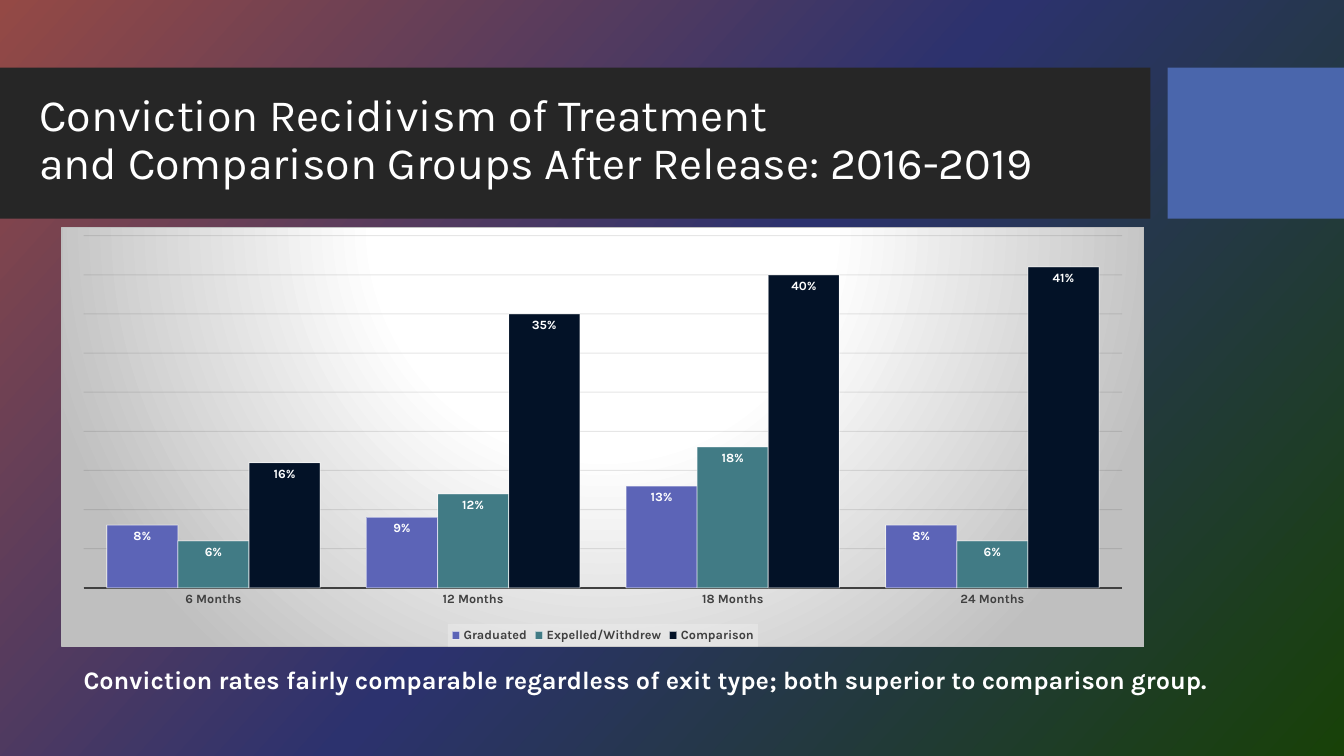
from dataclasses import dataclass

from lxml.etree import SubElement
from pptx import Presentation
from pptx.chart.data import CategoryChartData
from pptx.dml.color import RGBColor
from pptx.enum.chart import XL_CHART_TYPE, XL_LABEL_POSITION, XL_LEGEND_POSITION, XL_TICK_MARK
from pptx.enum.shapes import MSO_SHAPE
from pptx.enum.text import MSO_ANCHOR
from pptx.oxml import parse_xml
from pptx.oxml.ns import nsdecls, qn
from pptx.util import Inches, Pt


@dataclass(frozen=True)
class Theme:
    font: str = "Karla"
    white: str = "FFFFFF"
    banner: str = "262626"
    accent: str = "4A66AC"
    axis: str = "404040"
    grid: str = "0D0D0D"
    border: str = "BFBFBF"
    legend: str = "F2F2F2"
    background: tuple = ((0, "944945"), (50, "2C326E"), (100, "184108"))
    chart_fill: tuple = ((0, "FFFFFF"), (39, "FFFFFF"), (100, "BFBFBF"))
    title_size: int = 32
    caption_size: int = 18
    chart_size: int = 10
    label_size: int = 9


theme = Theme()


def style_font(font, size, color, bold=False):
    font.name = theme.font
    font.size = Pt(size)
    font.bold = bold
    font.color.rgb = RGBColor.from_string(color)


def gradient_xml(stops, direction):
    stop_xml = "".join(
        f'<a:gs pos="{position * 1000}"><a:srgbClr val="{color}"/></a:gs>'
        for position, color in stops
    )
    return (f'<a:gradFill {nsdecls("a")} rotWithShape="1">'
            f"<a:gsLst>{stop_xml}</a:gsLst>{direction}</a:gradFill>")


presentation = Presentation()
presentation.slide_width = Inches(13.33)
presentation.slide_height = Inches(7.5)
slide = presentation.slides.add_slide(presentation.slide_layouts[6])

# Diagonal background gradient
background_fill = slide.background.fill
background_fill.gradient()
old_gradient = slide.element.find(".//" + qn("a:gradFill"))
old_gradient.getparent().replace(
    old_gradient,
    parse_xml(gradient_xml(theme.background, '<a:lin ang="2520000" scaled="0"/>')),
)

# Banner and accent block
for left, width, color in ((0, 11.41, theme.banner), (11.58, 1.75, theme.accent)):
    block = slide.shapes.add_shape(
        MSO_SHAPE.RECTANGLE, Inches(left), Inches(0.67), Inches(width), Inches(1.5))
    block.shadow.inherit = False
    block.fill.solid()
    block.fill.fore_color.rgb = RGBColor.from_string(color)
    block.line.fill.background()

# Title and caption
texts = (
    ("Conviction Recidivism of Treatment\vand Comparison Groups After Release: 2016-2019",
     (0.29, 0.81, 12.32, 1.18), theme.title_size, False, MSO_ANCHOR.MIDDLE, 0.9),
    ("Conviction rates fairly comparable regardless of exit type; "
     "both superior to comparison group.",
     (0.73, 6.54, 11.61, 0.4), theme.caption_size, True, MSO_ANCHOR.TOP, 1.0),
)
for text, box, size, bold, anchor, spacing in texts:
    text_frame = slide.shapes.add_textbox(*map(Inches, box)).text_frame
    text_frame.word_wrap = True
    text_frame.vertical_anchor = anchor
    paragraph = text_frame.paragraphs[0]
    paragraph.text = text
    paragraph.line_spacing = spacing
    style_font(paragraph.font, size, theme.white, bold)

# Recidivism chart
series_data = (
    ("Graduated", (0.08, 0.09, 0.13, 0.08), "5C64B7"),
    ("Expelled/Withdrew", (0.06, 0.12, 0.18, 0.06), "417B85"),
    ("Comparison", (0.16, 0.35, 0.40, 0.41), "031227"),
)
chart_data = CategoryChartData(number_format="0%")
chart_data.categories = [f"{months} Months" for months in (6, 12, 18, 24)]
for name, values, _ in series_data:
    chart_data.add_series(name, values)
chart = slide.shapes.add_chart(
    XL_CHART_TYPE.COLUMN_CLUSTERED,
    Inches(0.61), Inches(2.25), Inches(10.74), Inches(4.17), chart_data).chart
chart.has_title = False
style_font(chart.font, theme.chart_size, theme.white)

# Columns and their labels
plot = chart.plots[0]
plot.gap_width = 65
plot.overlap = 0
plot.vary_by_categories = False
for series, (_, _, color) in zip(plot.series, series_data):
    series.format.fill.solid()
    series.format.fill.fore_color.rgb = RGBColor.from_string(color)
    line = series.format.line
    line.width = Pt(0.75)
    line.color.rgb = RGBColor.from_string(theme.white)
    line_color = line._ln.find(".//" + qn("a:srgbClr"))
    SubElement(line_color, qn("a:alpha"), val="50000")
    labels = series.data_labels
    labels.show_value = True
    labels.number_format = "0%"
    labels.number_format_is_linked = False
    labels.position = XL_LABEL_POSITION.INSIDE_END
    style_font(labels.font, theme.label_size, theme.white, True)

# Axes
category_axis = chart.category_axis
category_axis.major_tick_mark = XL_TICK_MARK.NONE
category_axis.format.line.width = Pt(1.5)
category_axis.format.line.color.rgb = RGBColor.from_string(theme.axis)
style_font(category_axis.tick_labels.font, theme.label_size, theme.axis, True)
value_axis = chart.value_axis
value_axis.visible = False
value_axis.minimum_scale = 0
value_axis.maximum_scale = 0.45
value_axis.major_unit = 0.05
value_axis.tick_labels.number_format = "0%"
value_axis.tick_labels.number_format_is_linked = False
value_axis.has_major_gridlines = True
grid_line = value_axis.major_gridlines.format.line
grid_line.width = Pt(0.75)
grid_line.color.rgb = RGBColor.from_string(theme.grid)
SubElement(grid_line._ln.find(".//" + qn("a:srgbClr")), qn("a:alpha"), val="10000")

# Legend with a translucent panel
chart.has_legend = True
legend = chart.legend
legend.position = XL_LEGEND_POSITION.BOTTOM
legend.include_in_layout = False
style_font(legend.font, theme.label_size, theme.axis, True)
legend._element.find(qn("c:txPr")).addprevious(parse_xml(
    f'<c:spPr {nsdecls("c", "a")}><a:solidFill><a:srgbClr val="{theme.legend}">'
    '<a:alpha val="39000"/></a:srgbClr></a:solidFill></c:spPr>'))

# Plot area position, as shares of the chart
plot_area = chart._chartSpace.find(".//" + qn("c:plotArea"))
for old_layout in plot_area.findall(qn("c:layout")):
    plot_area.remove(old_layout)
plot_area.insert(0, parse_xml(
    f'<c:layout {nsdecls("c")}><c:manualLayout><c:layoutTarget val="inner"/>'
    '<c:xMode val="edge"/><c:yMode val="edge"/><c:x val="0.02"/><c:y val="0.02"/>'
    '<c:w val="0.96"/><c:h val="0.84"/></c:manualLayout></c:layout>'))

# Chart panel: radial gradient and border
radial = ('<a:path path="circle"><a:fillToRect l="50000" t="-80000" '
          'r="50000" b="180000"/></a:path>')
chart._chartSpace.find(qn("c:chart")).addnext(parse_xml(
    f'<c:spPr {nsdecls("c", "a")}>{gradient_xml(theme.chart_fill, radial)}'
    f'<a:ln w="{Pt(0.75)}"><a:solidFill><a:srgbClr val="{theme.border}"/>'
    '</a:solidFill></a:ln></c:spPr>'))

presentation.save("out.pptx")
